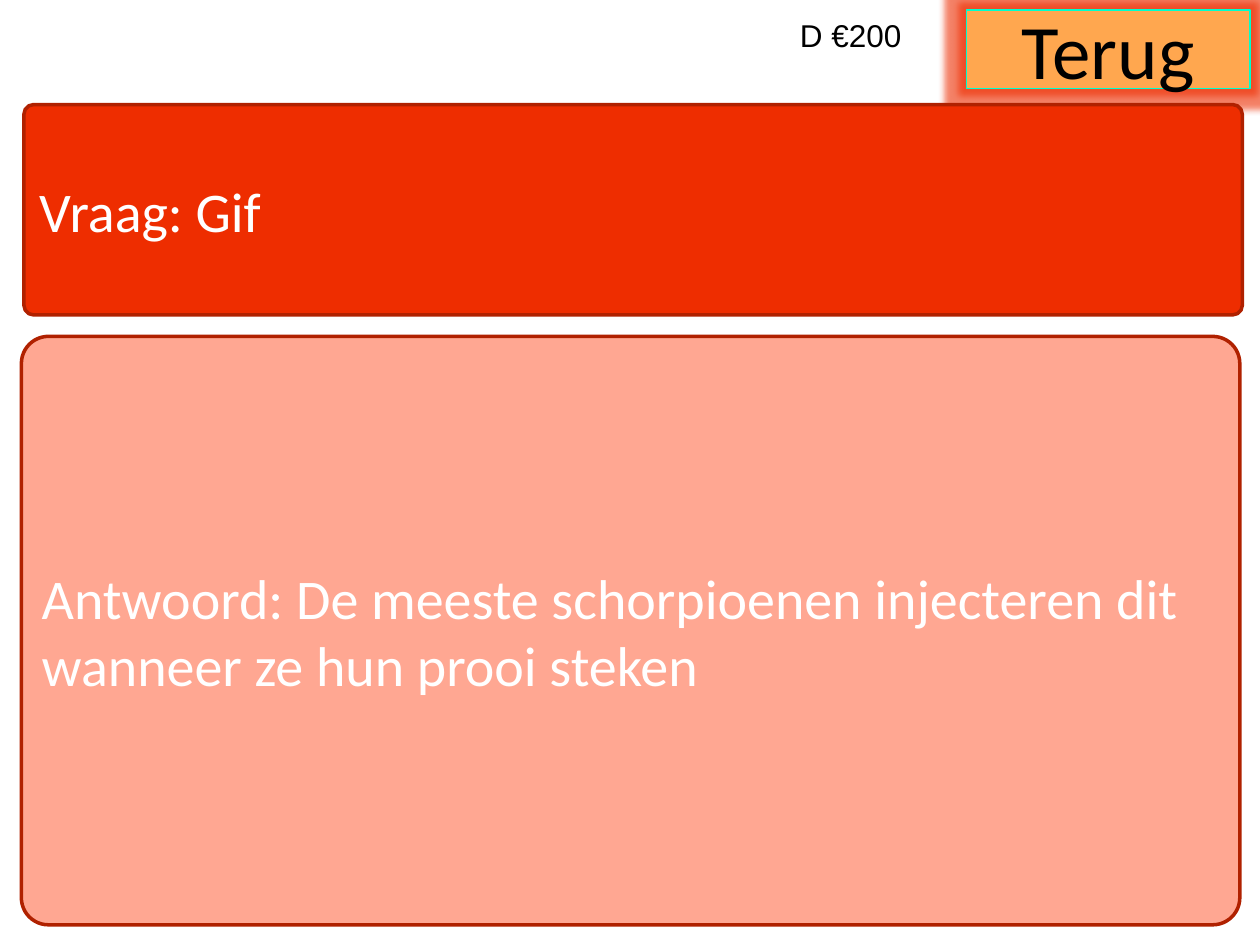
import pptx
import pptx.util
import pptx.oxml
import pptx.oxml.ns
import pptx.dml.color
import pptx.enum.shapes
import pptx.enum.text
from lxml import etree

Inches, Pt = pptx.util.Inches, pptx.util.Pt
MSO_SHAPE = pptx.enum.shapes.MSO_SHAPE
PP_ALIGN = pptx.enum.text.PP_ALIGN
MSO_ANCHOR = pptx.enum.text.MSO_ANCHOR
qn = pptx.oxml.ns.qn

COLORS = {
    "question": "EE2D00",
    "answer": "FFA792",
    "border": "B02100",
    "button": "FFA74F",
    "button_line": "00FFCC",
    "glow": "EE2D00",
    "black": "000000",
    "white": "FFFFFF",
}


def rgb(name):
    return pptx.dml.color.RGBColor.from_string(COLORS[name])


def set_text(sp, text, size, font, color, align=PP_ALIGN.LEFT, anchor=MSO_ANCHOR.MIDDLE):
    tf = sp.text_frame
    tf.word_wrap = True
    tf.vertical_anchor = anchor
    p = tf.paragraphs[0]
    p.text = text
    p.alignment = align
    p.font.size = Pt(size)
    p.font.name = font
    p.font.color.rgb = rgb(color)


def add_box(s, kind, box, fill, line, width):
    sp = s.shapes.add_shape(kind, *map(Inches, box))
    sp.shadow.inherit = False
    sp.fill.solid()
    sp.fill.fore_color.rgb = rgb(fill)
    sp.line.color.rgb = rgb(line)
    sp.line.width = Pt(width)
    return sp


def add_card(s, box, fill, text):
    sp = add_box(s, MSO_SHAPE.ROUNDED_RECTANGLE, box, fill, "border", 2)
    sp.adjustments[0] = 0.046
    set_text(sp, text, 32, "Calibri", "white")


def add_glow(sp, color, radius, alpha):
    effects = sp._element.spPr.find(qn("a:effectLst"))
    glow = etree.SubElement(effects, qn("a:glow"), rad=str(Pt(radius)))
    clr = etree.SubElement(glow, qn("a:srgbClr"), val=COLORS[color])
    etree.SubElement(clr, qn("a:alpha"), val=str(alpha * 1000))


def add_button(s, box, text):
    sp = add_box(s, MSO_SHAPE.RECTANGLE, box, "button", "button_line", 0.75)
    add_glow(sp, "glow", 8, 60)
    set_text(sp, text, 44, "Calibri", "black", PP_ALIGN.CENTER)


def add_label(s, box, text):
    sp = s.shapes.add_textbox(*map(Inches, box))
    set_text(sp, text, 18, "Arial", "black", anchor=MSO_ANCHOR.TOP)


def main():
    prs = pptx.Presentation()
    prs.slide_width, prs.slide_height = Inches(10), Inches(7.5)
    s = prs.slides.add_slide(prs.slide_layouts[6])

    # Top row: back button and the value of the question
    add_button(s, (7.67, 0.08, 2.25, 0.62), "Terug")
    add_label(s, (6.25, 0.08, 1.42, 0.64), "D €200")

    # Answer and question cards
    add_card(s, (0.17, 2.67, 9.67, 4.67), "answer",
             "Antwoord: De meeste schorpioenen injecteren dit wanneer ze hun prooi steken")
    add_card(s, (0.19, 0.83, 9.67, 1.67), "question", "Vraag: Gif")

    prs.save("out.pptx")


if __name__ == "__main__":
    main()
